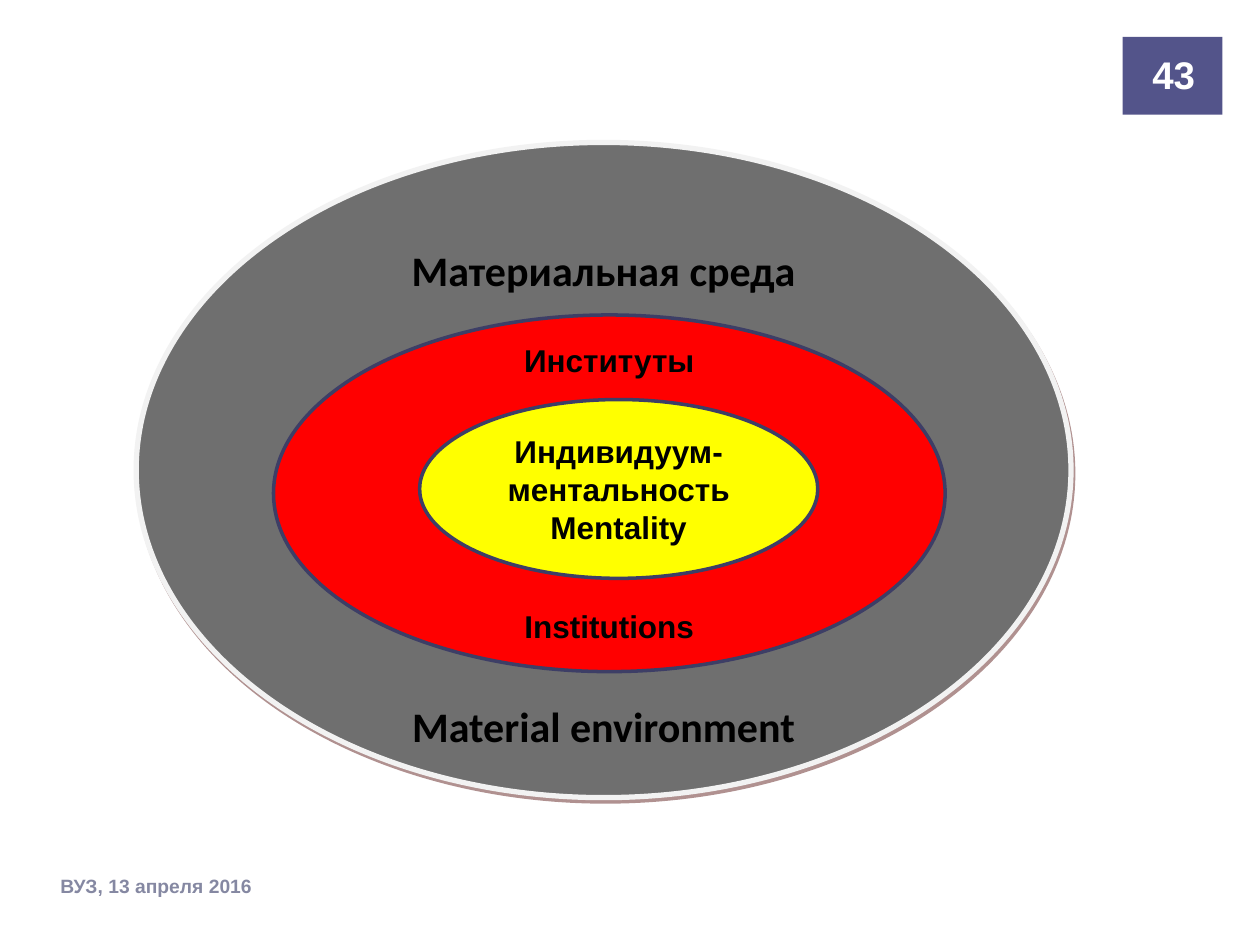
from lxml import etree
from pptx import Presentation
from pptx.dml.color import RGBColor
from pptx.enum import shapes, text
from pptx.oxml import ns
from pptx.util import Pt

WHITE = RGBColor(0xFF, 0xFF, 0xFF)
BLACK = RGBColor(0x00, 0x00, 0x00)
INDIGO = RGBColor(0x53, 0x54, 0x8A)
DARK_INDIGO = RGBColor(0x3D, 0x3E, 0x66)
MUTED = RGBColor(0x85, 0x88, 0xA2)
GREY = RGBColor(0x6F, 0x6F, 0x6F)
PALE = RGBColor(0xF2, 0xF2, 0xF2)
RED = RGBColor(0xFF, 0x00, 0x00)
YELLOW = RGBColor(0xFF, 0xFF, 0x00)
MAROON = RGBColor(0x62, 0x24, 0x23)


def write_text(shape, lines, size, color, font="Arial", align=None, gap=0,
               anchor=text.MSO_ANCHOR.MIDDLE):
    """Fill a shape with bold paragraphs separated by a gap in points."""
    frame = shape.text_frame
    frame.word_wrap = True
    frame.vertical_anchor = anchor
    frame.text = "\n".join(lines)
    for index, paragraph in enumerate(frame.paragraphs):
        paragraph.alignment = align
        paragraph.space_before = Pt(gap if index else 0)
        for run in paragraph.runs:
            run.font.name = font
            run.font.size = Pt(size)
            run.font.bold = True
            run.font.color.rgb = color


def add_block(slide, kind, box, fill, line=None, line_width=0):
    """Add a filled preset shape with an optional outline."""
    shape = slide.shapes.add_shape(kind, *map(Pt, box))
    shape.shadow.inherit = False
    shape.fill.solid()
    shape.fill.fore_color.rgb = fill
    if line is None:
        shape.line.fill.background()
    else:
        shape.line.color.rgb = line
        shape.line.width = Pt(line_width)
    return shape


def add_hard_shadow(shape, color, distance, degrees, opacity):
    """Give a shape an unblurred, half-transparent shadow."""
    effects = shape._element.spPr.find(ns.qn("a:effectLst"))
    shadow = etree.SubElement(
        effects, ns.qn("a:outerShdw"), blurRad="0", dist=str(Pt(distance)),
        dir=str(degrees * 60000), algn="ctr", rotWithShape="0")
    tint = etree.SubElement(shadow, ns.qn("a:srgbClr"), val=str(color))
    etree.SubElement(tint, ns.qn("a:alpha"), val=str(opacity * 1000))


def add_page_number(slide, box, number):
    """Place the page number in its coloured tab."""
    left, top, width, height = box
    add_block(slide, shapes.MSO_SHAPE.RECTANGLE, box, INDIGO)
    label = slide.shapes.add_textbox(
        Pt(left + 9), Pt(top + 7), Pt(width - 17.5), Pt(height - 16))
    write_text(label, [number], 22, WHITE, align=text.PP_ALIGN.RIGHT)


def add_footer(slide, box, caption):
    """Place the footer caption."""
    write_text(slide.shapes.add_textbox(*map(Pt, box)), [caption], 11, MUTED)


def add_nested_ellipses(slide, box):
    """Draw the three nested layers from the environment to the individual."""
    left, top, width, height = box
    oval = shapes.MSO_SHAPE.OVAL
    center = text.PP_ALIGN.CENTER

    environment = add_block(slide, oval, box, GREY, PALE, 3)
    add_hard_shadow(environment, MAROON, 2.2, 63, 50)
    write_text(environment, ["Материальная среда", "Material environment"],
               24, BLACK, "Calibri", center, 232, text.MSO_ANCHOR.TOP)

    institutions = add_block(
        slide, oval, (left + 78.5, top + 98.6, 383.8, 203.8), RED, DARK_INDIGO, 2)
    write_text(institutions, ["Институты", "Institutions"],
               18, BLACK, align=center, gap=130.5)

    individual = add_block(
        slide, oval, (left + 162, top + 146.9, 227.5, 102.2), YELLOW, DARK_INDIGO, 2)
    write_text(individual, ["Индивидуум-ментальность", "Mentality"],
               18, BLACK, align=center)


def main():
    """Build and save the slide."""
    presentation = Presentation()
    presentation.slide_width, presentation.slide_height = Pt(720), Pt(540)
    slide = presentation.slides.add_slide(presentation.slide_layouts[6])
    add_page_number(slide, (641.5, 21, 57, 44.6), "43")
    add_footer(slide, (27.4, 488.2, 280.8, 36), "ВУЗ, 13 апреля 2016")
    add_nested_ellipses(slide, (77.8, 81.4, 534.2, 374.4))
    presentation.save("out.pptx")


if __name__ == "__main__":
    main()
